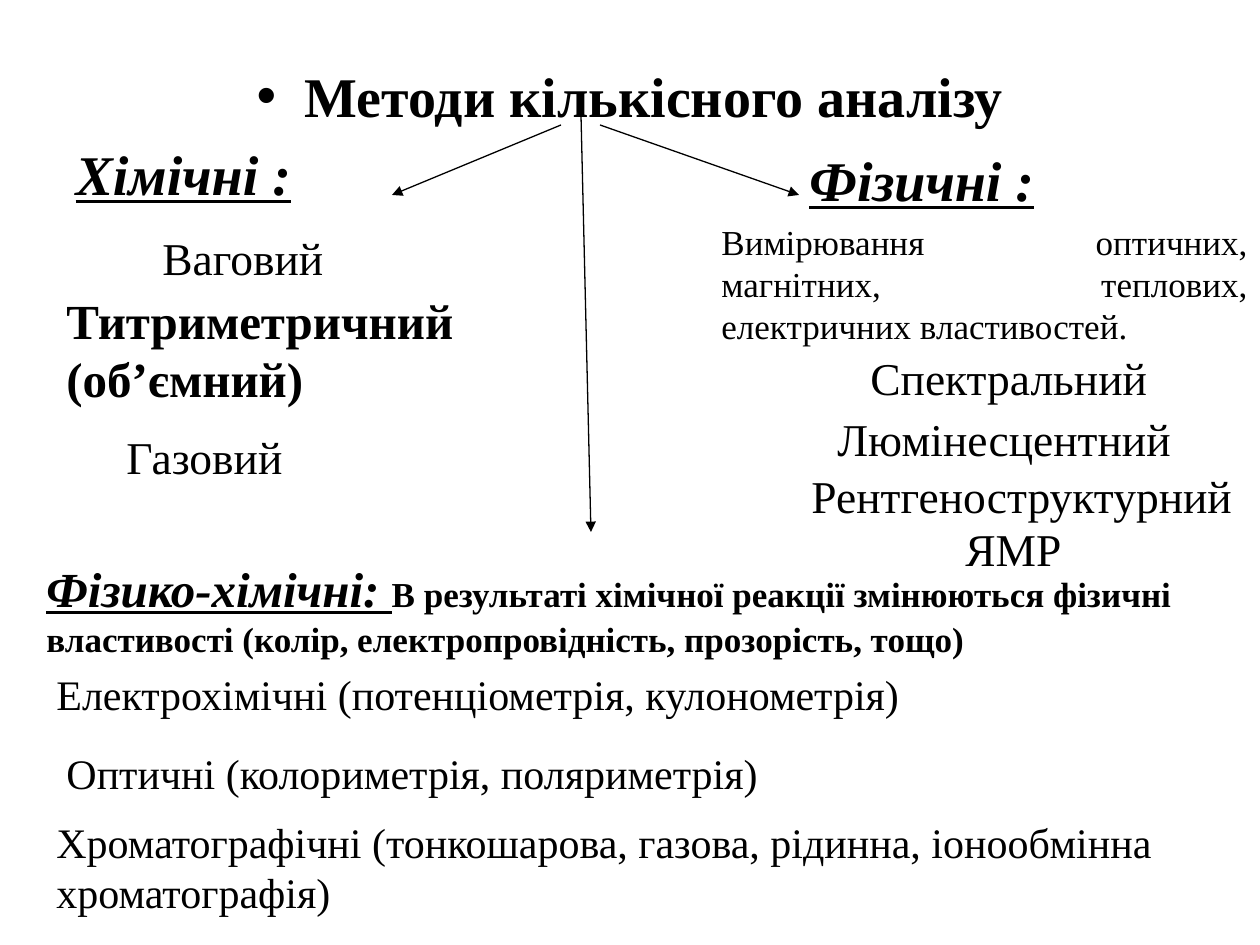
from lxml.etree import SubElement
from pptx import Presentation
from pptx.dml.color import RGBColor
from pptx.enum.shapes import MSO_CONNECTOR
from pptx.enum.text import MSO_AUTO_SIZE, PP_ALIGN
from pptx.oxml.ns import qn
from pptx.util import Emu, Pt

BLACK = RGBColor(0, 0, 0)
FONT = "Times New Roman"
NBSP = chr(160)  # keeps the last two words of the description together

BOLD = {"bold": True}
HEADING = {"bold": True, "italic": True, "underline": True}

# Left, top, width, height, alignment, runs of (text, size, format)
LEFT, CENTER, JUSTIFY = PP_ALIGN.LEFT, PP_ALIGN.CENTER, PP_ALIGN.JUSTIFY
CHEMICAL = [
    (84, 224, 318, 67, CENTER, [("Ваговий", 26, {})]),
    (54, 284, 556, 130, LEFT, [("Титриметричний (об’ємний)", 28, BOLD)]),
    (114, 423, 268, 67, LEFT, [("Газовий", 26, {})]),
]
PHYSICAL = [
    (797, 139, 400, 77, LEFT, [("Фізичні :", 32, HEADING)]),
    (709, 214, 551, 139, JUSTIFY,
     [("Вимірювання оптичних, магнітних, теплових, "
       f"електричних{NBSP}властивостей.", 20, {})]),
    (858, 344, 358, 67, LEFT, [("Спектральний", 26, {})]),
    (825, 405, 360, 67, LEFT, [("Люмінесцентний", 26, {})]),
    (799, 462, 496, 67, LEFT, [("Рентгеноструктурний", 26, {})]),
    (825, 515, 377, 67, CENTER, [("ЯМР", 26, {})]),
]
PHYSICOCHEMICAL = [
    (34, 552, 1201, 115, LEFT,
     [("Фізико-хімічні: ", 28, HEADING),
      ("В результаті хімічної реакції змінюються фізичні властивості "
       "(колір, електропровідність, прозорість, тощо)", 20, BOLD)]),
    (44, 662, 1216, 63, LEFT,
     [("Електрохімічні (потенціометрія, кулонометрія)", 24, {})]),
    (54, 741, 903, 63, LEFT,
     [("Оптичні (колориметрія, поляриметрія)", 24, {})]),
    (44, 810, 1191, 115, LEFT,
     [("Хроматографічні (тонкошарова, газова, рідинна, іонообмінна "
       "хроматографія)", 24, {})]),
]
ARROWS = [(561, 125, 392, 195), (600, 125, 799, 195), (581, 115, 591, 532)]


def px(n):
    return Emu(round(n * 914400 / 126))


def add_run(p, text, size, style):
    r = p.add_run()
    r.text = text
    r.font.color.rgb = BLACK
    values = {"name": FONT, "size": Pt(size), **style}
    for name, value in values.items():
        setattr(r.font, name, value)


def add_text(s, left, top, width, height, align, runs):
    sp = s.shapes.add_textbox(px(left), px(top), px(width), px(height))
    tf = sp.text_frame
    tf.word_wrap = True
    tf.auto_size = MSO_AUTO_SIZE.SHAPE_TO_FIT_TEXT
    p = tf.paragraphs[0]
    p.alignment = align
    for run in runs:
        add_run(p, *run)


def add_arrow(s, x1, y1, x2, y2):
    line = s.shapes.add_connector(MSO_CONNECTOR.STRAIGHT,
                                  px(x1), px(y1), px(x2), px(y2))
    line.line.color.rgb = BLACK
    line.line.width = Pt(0.75)
    SubElement(line.line._get_or_add_ln(), qn("a:tailEnd"), type="triangle")
    SubElement(line._element.spPr, qn("a:effectLst"))


def set_indent(p, left, first):
    ppr = p._p.get_or_add_pPr()
    ppr.set("marL", str(px(left)))
    ppr.set("indent", str(px(first)))
    return ppr


def fill_body(body):
    body.left, body.top, body.width, body.height = map(px, (63, 55, 1134, 789))
    tf = body.text_frame

    # Bulleted heading
    p = tf.paragraphs[0]
    p.alignment = CENTER
    ppr = set_indent(p, 48, -48)
    SubElement(ppr, qn("a:buChar"), char="•")
    add_run(p, "Методи кількісного аналізу", 32, BOLD)

    # Heading of the chemical branch
    p = tf.add_paragraph()
    p.alignment = JUSTIFY
    ppr = set_indent(p, 0, 0)
    SubElement(ppr, qn("a:buNone"))
    add_run(p, "Хімічні :", 32, HEADING)


def main():
    prs = Presentation()
    prs.slide_width, prs.slide_height = px(1260), px(945)
    s = prs.slides.add_slide(prs.slide_layouts[1])
    title = s.shapes.title._element
    title.getparent().remove(title)

    fill_body(s.placeholders[1])
    for arrow in ARROWS:
        add_arrow(s, *arrow)
    for item in CHEMICAL + PHYSICAL + PHYSICOCHEMICAL:
        add_text(s, *item)
    prs.save("out.pptx")


if __name__ == "__main__":
    main()
